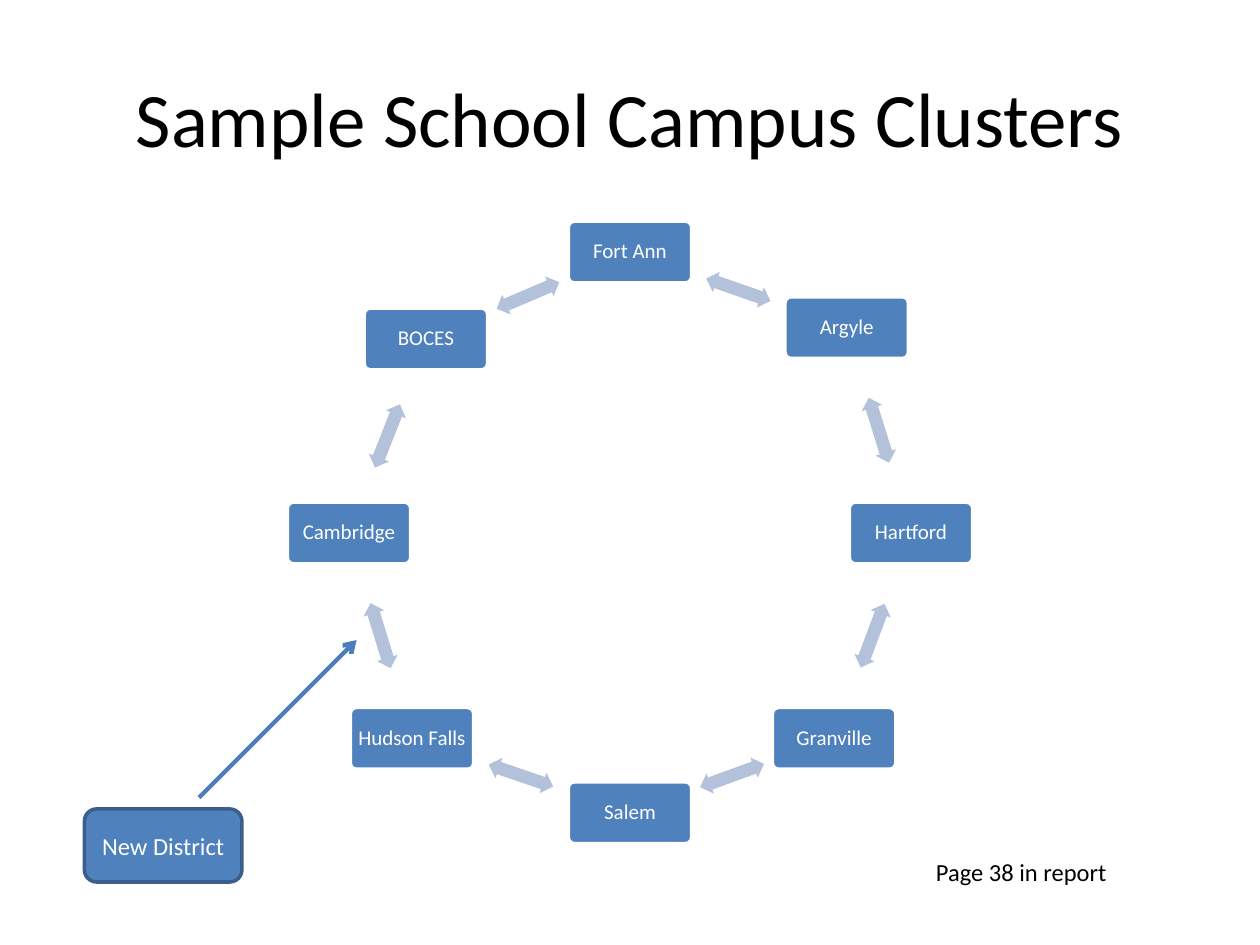
from math import atan2, degrees

from lxml.etree import SubElement
from pptx import Presentation
from pptx.dml.color import RGBColor
from pptx.enum.shapes import MSO_CONNECTOR as Line, MSO_SHAPE as Shape
from pptx.enum.text import MSO_ANCHOR as Anchor, PP_ALIGN as Align
from pptx.oxml.ns import qn
from pptx.util import Inches, Pt

BLUE, PALE, EDGE, LINK = "4F81BD", "B3C1DB", "3A5F8C", "4B7EBC"
WHITE, BLACK = "FFFFFF", "000000"


def color(code):
    return RGBColor.from_string(code)


class Deck:
    font = "Calibri"

    def __init__(self):
        self.prs = Presentation()
        self.prs.slide_width, self.prs.slide_height = Inches(10), Inches(7.5)
        self.slide = self.prs.slides.add_slide(self.prs.slide_layouts[5])
        self.shapes = self.slide.shapes

    def words(self, shape, text, size, code, align=Align.CENTER, anchor=Anchor.MIDDLE):
        frame = shape.text_frame
        frame.word_wrap, frame.vertical_anchor = True, anchor
        para = frame.paragraphs[0]
        para.text, para.alignment = text, align
        para.font.name, para.font.size = self.font, Pt(size)
        para.font.color.rgb = color(code)
        return para

    def title(self, text, *box):
        shape = self.shapes.title
        shape.left, shape.top, shape.width, shape.height = map(Inches, box)
        self.words(shape, text, 44, BLACK)

    def label(self, text, *box):
        shape = self.shapes.add_textbox(*map(Inches, box))
        self.words(shape, text, 14, BLACK, Align.LEFT, Anchor.TOP)

    def block(self, kind, box, fill, edge=None):
        shape = self.shapes.add_shape(kind, *map(Inches, box))
        shape.shadow.inherit = False
        shape.fill.solid()
        shape.fill.fore_color.rgb = color(fill)
        if edge:
            shape.line.color.rgb, shape.line.width = color(edge), Pt(2)
        else:
            shape.line.fill.background()
        return shape

    def node(self, text, x, y, wide=0.98, high=0.49):
        box = x - wide / 2, y - high / 2, wide, high
        shape = self.block(Shape.ROUNDED_RECTANGLE, box, BLUE, WHITE)
        shape.adjustments[0] = 0.1
        frame = shape.text_frame
        frame.margin_left = frame.margin_right = Inches(0.05)
        frame.margin_top = frame.margin_bottom = Inches(0.05)
        self.words(shape, text, 12, WHITE).line_spacing = 0.9

    def link(self, start, end, wide=0.54, high=0.17):
        """Double arrow halfway between two nodes, turned along their line."""
        (x1, y1), (x2, y2) = start, end
        box = (x1 + x2 - wide) / 2, (y1 + y2 - high) / 2, wide, high
        shape = self.block(Shape.LEFT_RIGHT_ARROW, box, PALE)
        shape.adjustments[0], shape.adjustments[1] = 0.6, 0.5
        shape.rotation = degrees(atan2(y2 - y1, x2 - x1)) % 360

    def arrow(self, *ends):
        shape = self.shapes.add_connector(Line.STRAIGHT, *map(Inches, ends))
        shape.line.color.rgb, shape.line.width = color(LINK), Pt(2.5)
        props = shape._element.spPr
        SubElement(props.find(qn("a:ln")), qn("a:tailEnd"), type="arrow")
        SubElement(props, qn("a:effectLst"))


# School name and centre of its box, clockwise from the top
SCHOOLS = {
    "Fort Ann": (5, 2),
    "Argyle": (6.72, 2.6),
    "Hartford": (7.23, 4.23),
    "Granville": (6.62, 5.86),
    "Salem": (5, 6.45),
    "Hudson Falls": (3.27, 5.86),
    "Cambridge": (2.77, 4.23),
    "BOCES": (3.38, 2.69),
}


def main():
    deck = Deck()
    deck.title("Sample School Campus Clusters", 0.5, 0.3, 9, 1.25)
    deck.label("Page 38 in report", 7.33, 6.75, 2.17, 0.34)

    # Ring of schools
    spots = list(SCHOOLS.values())
    for (name, spot), after in zip(SCHOOLS.items(), spots[1:] + spots[:1]):
        deck.node(name, *spot)
        deck.link(spot, after)

    # New district joining the ring
    box = deck.block(Shape.ROUNDED_RECTANGLE, (0.67, 6.42, 1.25, 0.58), BLUE, EDGE)
    deck.words(box, "New District", 14, WHITE)
    deck.arrow(1.58, 6.33, 2.83, 5.08)

    deck.prs.save("out.pptx")


if __name__ == "__main__":
    main()
